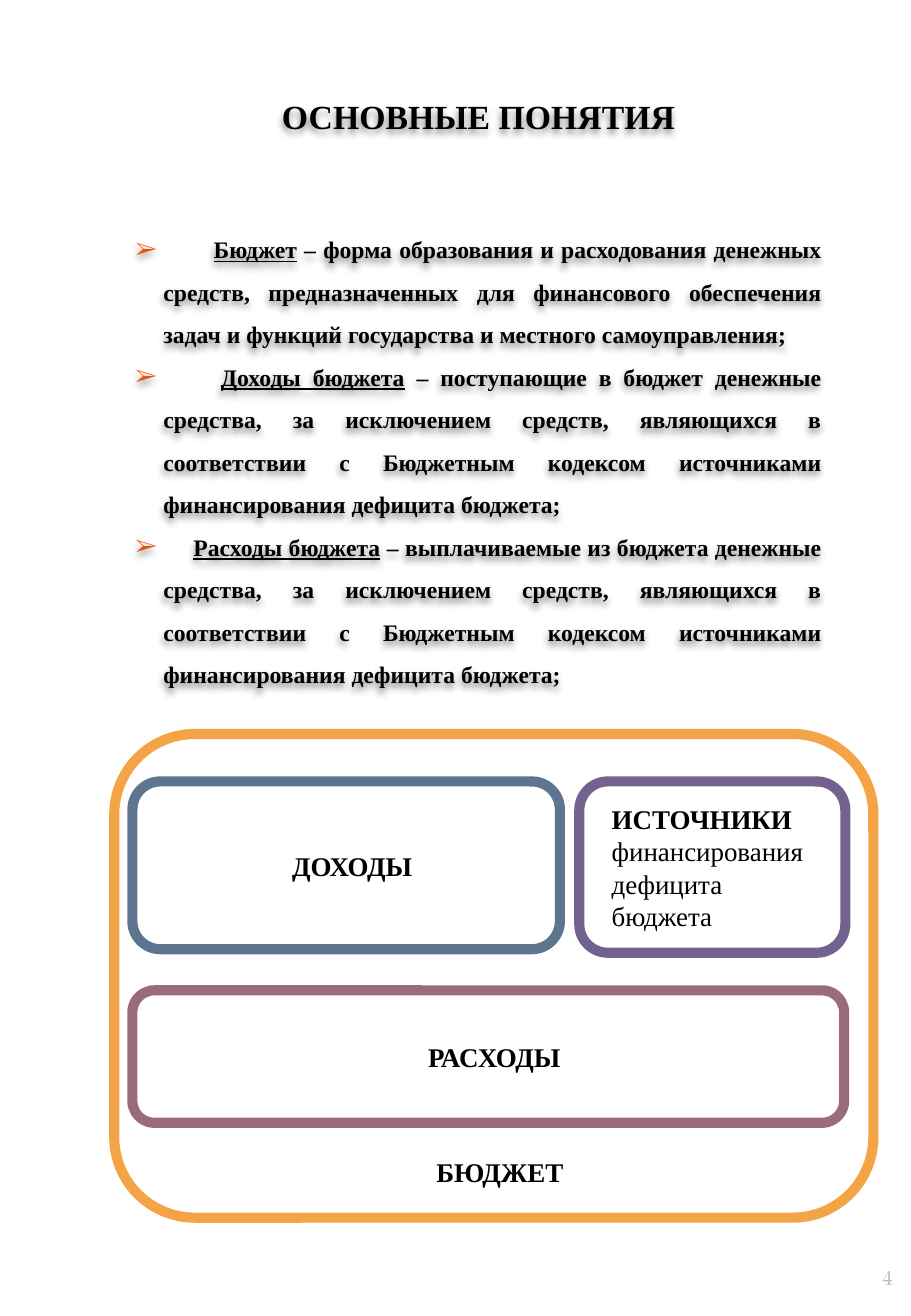
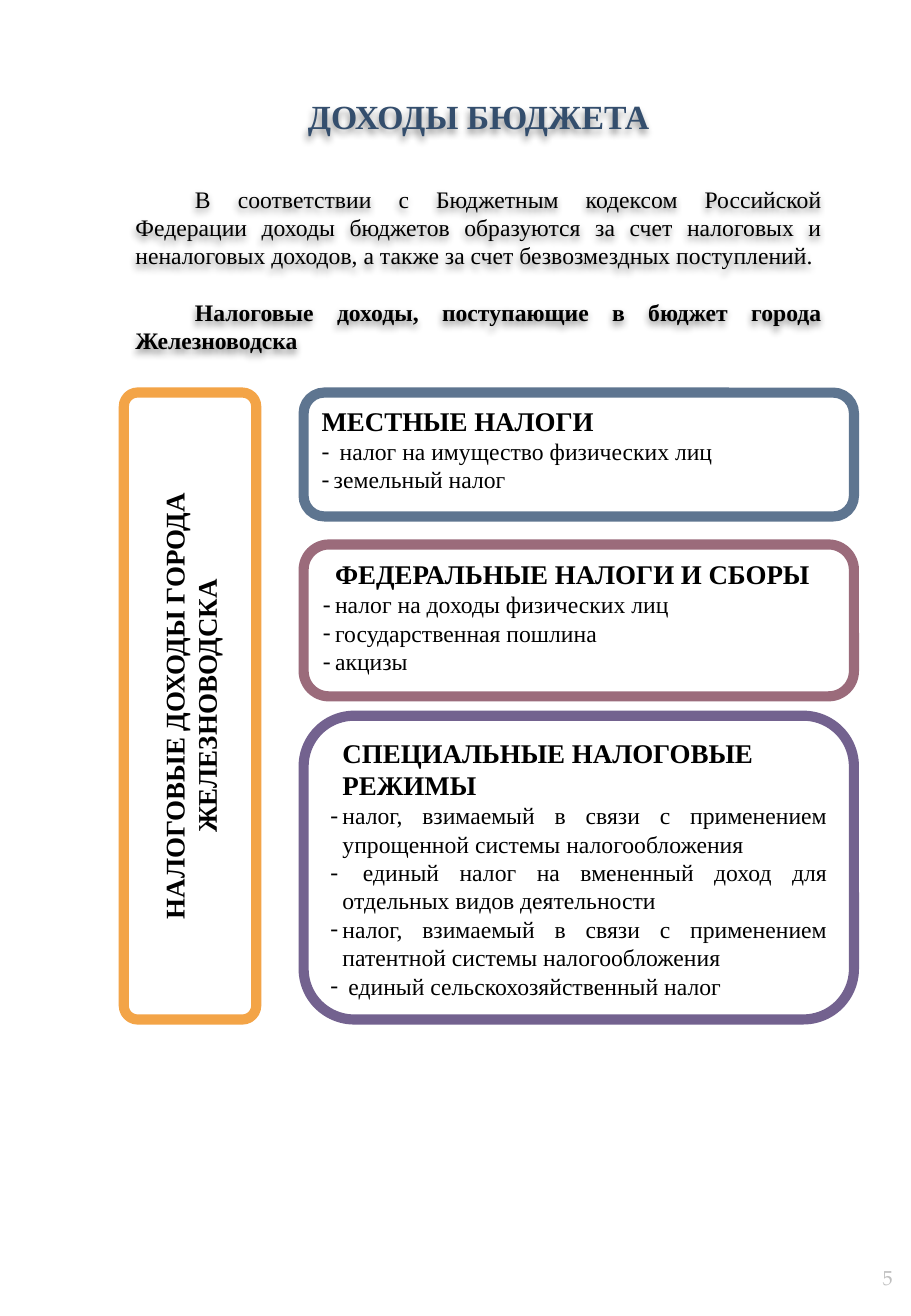
from dataclasses import dataclass
from typing import Optional

from lxml.etree import SubElement
from pptx import Presentation
from pptx.dml.color import RGBColor
from pptx.enum.shapes import MSO_SHAPE
from pptx.enum.text import MSO_ANCHOR, PP_ALIGN
from pptx.oxml.ns import qn
from pptx.shapes.autoshape import Shape
from pptx.slide import Slide
from pptx.util import Pt

# Shared look
BLACK = RGBColor(0x00, 0x00, 0x00)
WHITE = RGBColor(0xFF, 0xFF, 0xFF)
NAVY = RGBColor(0x34, 0x4E, 0x6D)
ORANGE = RGBColor(0xF3, 0xA4, 0x47)
BLUE = RGBColor(0x5E, 0x75, 0x90)
ROSE = RGBColor(0x9B, 0x6B, 0x7B)
VIOLET = RGBColor(0x73, 0x62, 0x8F)
BULLET_RED = RGBColor(0xED, 0x52, 0x0D)
GREY = RGBColor(0xBF, 0xBF, 0xBF)
BODY_FONT = "Times New Roman"
NUMBER_FONT = "TeX Gyre Pagella"
TITLE_SIZE, HEADING_SIZE, BODY_SIZE = 20, 16, 14
LEVEL_INDENT = 7.2
BORDER_WIDTH = 6


@dataclass
class Piece:
    text: str
    bold: bool = False
    underline: bool = False
    spacing: float = 0


@dataclass
class Line:
    pieces: list[Piece]
    size: float = BODY_SIZE
    color: RGBColor = BLACK
    align: PP_ALIGN = PP_ALIGN.LEFT
    margin: float = 0
    indent: float = 0
    spacing: float = 1
    after: float = 0
    bullet: str = ""
    bullet_color: RGBColor = BLACK
    font: str = BODY_FONT


@dataclass
class Box:
    left: float
    top: float
    width: float
    height: float
    border: Optional[RGBColor]
    lines: list[Line]
    anchor: MSO_ANCHOR = MSO_ANCHOR.TOP
    fill: Optional[RGBColor] = None
    rounding: Optional[float] = None
    vertical: bool = False
    text_shadow: bool = False


# Kinds of text
def title(text: str, after: float, color: RGBColor = BLACK) -> Line:
    return Line([Piece(text, True)], TITLE_SIZE, color, PP_ALIGN.CENTER, after=after)


def heading(text: str, align: PP_ALIGN = PP_ALIGN.LEFT, margin: float = LEVEL_INDENT) -> Line:
    return Line([Piece(text, True)], HEADING_SIZE, align=align, margin=margin)


def item(text: str, align: PP_ALIGN = PP_ALIGN.JUSTIFY) -> Line:
    return Line([Piece(text)], align=align, margin=LEVEL_INDENT,
                indent=-LEVEL_INDENT, bullet="-")


def definition(term: str, meaning: str, lead: float) -> Line:
    pieces = [Piece(" ", True, spacing=lead), Piece(term, True, True), Piece(meaning, True)]
    return Line(pieces, align=PP_ALIGN.JUSTIFY, margin=16.6, indent=-16.6, spacing=1.5,
                bullet="➢", bullet_color=BULLET_RED)


def body(text: str, bold: bool = False, after: float = 0) -> Line:
    return Line([Piece(text, bold)], align=PP_ALIGN.JUSTIFY, indent=35.3, after=after)


# Drawing
def write_lines(shape: Shape, lines: list[Line]) -> None:
    frame = shape.text_frame
    for index, line in enumerate(lines):
        paragraph = frame.add_paragraph() if index else frame.paragraphs[0]
        paragraph.alignment = line.align
        paragraph.line_spacing = line.spacing
        paragraph.space_after = Pt(line.after)
        properties = paragraph._p.get_or_add_pPr()
        properties.set("marL", str(Pt(line.margin)))
        properties.set("indent", str(Pt(line.indent)))
        if line.bullet:
            color = SubElement(properties, qn("a:buClr"))
            SubElement(color, qn("a:srgbClr"), val=str(line.bullet_color))
            SubElement(properties, qn("a:buFont"), typeface=BODY_FONT)
            SubElement(properties, qn("a:buChar"), char=line.bullet)
        for piece in line.pieces:
            run = paragraph.add_run()
            run.text = piece.text
            run.font.name = line.font
            run.font.size = Pt(line.size)
            run.font.bold = piece.bold
            run.font.underline = piece.underline
            run.font.color.rgb = line.color
            if piece.spacing:
                run._r.get_or_add_rPr().set("spc", str(round(piece.spacing * 100)))


def add_text_shadow(shape: Shape) -> None:
    effects = shape._element.spPr.find(qn("a:effectLst"))
    shadow = SubElement(effects, qn("a:outerShdw"), blurRad=str(Pt(4.5)),
                        dist=str(Pt(3)), dir="5400000", rotWithShape="0")
    color = SubElement(shadow, qn("a:srgbClr"), val=str(BLACK))
    SubElement(color, qn("a:alpha"), val="48000")


def add_box(slide: Slide, box: Box) -> None:
    shape = slide.shapes.add_shape(MSO_SHAPE.ROUNDED_RECTANGLE, Pt(box.left), Pt(box.top),
                                   Pt(box.width), Pt(box.height))
    shape.shadow.inherit = False
    if box.rounding is not None:
        shape.adjustments[0] = box.rounding
    if box.fill is None:
        shape.fill.background()
    else:
        shape.fill.solid()
        shape.fill.fore_color.rgb = box.fill
    if box.border is None:
        shape.line.fill.background()
    else:
        shape.line.color.rgb = box.border
        shape.line.width = Pt(BORDER_WIDTH)
    if box.text_shadow:
        add_text_shadow(shape)
    frame = shape.text_frame
    frame.word_wrap = True
    frame.vertical_anchor = box.anchor
    if box.vertical:
        frame._txBody.bodyPr.set("vert", "vert270")
    write_lines(shape, box.lines)


def content(lines: list[Line]) -> Box:
    return Box(50.4, 30.2, 466.6, 703.4, None, lines, text_shadow=True)


def add_page_number(slide: Slide, number: int) -> None:
    shape = slide.shapes.add_textbox(Pt(498.2), Pt(722.2), Pt(31), Pt(41.8))
    frame = shape.text_frame
    frame.word_wrap = True
    frame.vertical_anchor = MSO_ANCHOR.BOTTOM
    frame.margin_left = frame.margin_right = frame.margin_top = frame.margin_bottom = 0
    write_lines(shape, [Line([Piece(str(number))], 12, GREY, PP_ALIGN.RIGHT, font=NUMBER_FONT)])


# Slide contents
EXCEPT_SOURCES = (" денежные средства, за исключением средств, являющихся в соответствии "
                  "с Бюджетным кодексом источниками финансирования дефицита бюджета;")

CONCEPTS = [
    Box(67.7, 434.9, 450, 286.6, ORANGE, [heading("БЮДЖЕТ", PP_ALIGN.CENTER)],
        MSO_ANCHOR.BOTTOM, WHITE),
    content([
        title("ОСНОВНЫЕ ПОНЯТИЯ", after=50.4),
        definition("Бюджет", " – форма образования и расходования денежных средств, "
                   "предназначенных для финансового обеспечения задач и функций "
                   "государства и местного самоуправления;", lead=25.5),
        definition("Доходы бюджета", " – поступающие в бюджет" + EXCEPT_SOURCES, lead=27),
        definition("Расходы бюджета", " – выплачиваемые из бюджета" + EXCEPT_SOURCES, lead=14),
    ]),
    Box(78.5, 463, 253.4, 99.4, BLUE, [heading("ДОХОДЫ", PP_ALIGN.CENTER)], MSO_ANCHOR.MIDDLE),
    Box(78.5, 586.8, 421.9, 78.5, ROSE, [heading("РАСХОДЫ", PP_ALIGN.CENTER)],
        MSO_ANCHOR.MIDDLE),
    Box(343.4, 463, 157.7, 101.5, VIOLET,
        [Line([Piece("ИСТОЧНИКИ ", True), Piece("финансирования дефицита бюджета")],
              HEADING_SIZE, margin=LEVEL_INDENT)], MSO_ANCHOR.MIDDLE),
]

TAX_LEFT, TAX_TOP, TAX_WIDTH = 180, 232.6, 326.2
REVENUES = [
    content([
        title("ДОХОДЫ БЮДЖЕТА", after=28.8, color=NAVY),
        body("В соответствии с Бюджетным кодексом Российской Федерации доходы бюджетов "
             "образуются за счет налоговых и неналоговых доходов, а также за счет "
             "безвозмездных поступлений.", after=16.8),
        body("Налоговые доходы, поступающие в бюджет города Железноводска", bold=True),
    ]),
    Box(73.4, TAX_TOP, 78.5, 371.5, ORANGE,
        [heading("НАЛОГОВЫЕ ДОХОДЫ ГОРОДА ЖЕЛЕЗНОВОДСКА", PP_ALIGN.CENTER, margin=0)],
        MSO_ANCHOR.MIDDLE, WHITE, rounding=0.105, vertical=True),
    Box(TAX_LEFT, TAX_TOP, TAX_WIDTH, 73.4, BLUE, [
        heading("МЕСТНЫЕ НАЛОГИ", margin=0),
        item(" налог на имущество физических лиц", PP_ALIGN.LEFT),
        item("земельный налог", PP_ALIGN.LEFT),
    ]),
    Box(TAX_LEFT, 322.6, TAX_WIDTH, 90, ROSE, [
        heading("ФЕДЕРАЛЬНЫЕ НАЛОГИ И СБОРЫ"),
        item("налог на доходы физических лиц"),
        item("государственная пошлина"),
        item("акцизы"),
    ]),
    Box(TAX_LEFT, 424.1, TAX_WIDTH, 180, VIOLET, [
        heading("СПЕЦИАЛЬНЫЕ НАЛОГОВЫЕ РЕЖИМЫ"),
        item("налог, взимаемый в связи с применением упрощенной системы налогообложения"),
        item(" единый налог на вмененный доход для отдельных видов деятельности"),
        item("налог, взимаемый в связи с применением патентной системы налогообложения"),
        item(" единый сельскохозяйственный налог"),
    ]),
]


def main() -> None:
    presentation = Presentation()
    presentation.slide_width = Pt(540)
    presentation.slide_height = Pt(779.76)
    for number, boxes in enumerate((CONCEPTS, REVENUES), start=4):
        slide = presentation.slides.add_slide(presentation.slide_layouts[6])
        for box in boxes:
            add_box(slide, box)
        add_page_number(slide, number)
    presentation.save("out.pptx")


if __name__ == "__main__":
    main()
